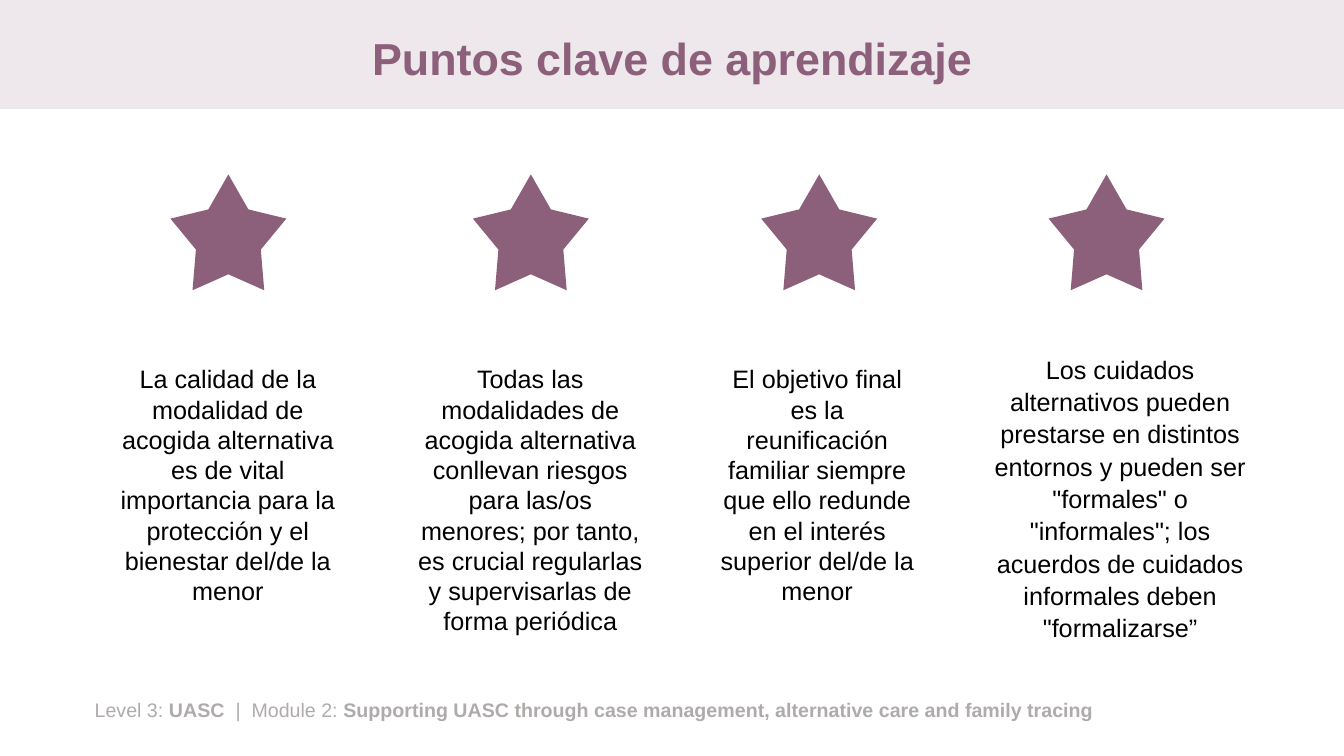
from dataclasses import dataclass

from pptx import Presentation
from pptx.dml.color import RGBColor
from pptx.enum.shapes import MSO_SHAPE
from pptx.enum.text import MSO_ANCHOR, MSO_AUTO_SIZE, PP_ALIGN
from pptx.util import Inches, Pt

RECTANGLE = MSO_SHAPE.RECTANGLE
STAR = MSO_SHAPE.STAR_5_POINT
TOP = MSO_ANCHOR.TOP
MIDDLE = MSO_ANCHOR.MIDDLE
LEFT = PP_ALIGN.LEFT
CENTER = PP_ALIGN.CENTER
FIXED_SIZE = MSO_AUTO_SIZE.NONE
GROW = MSO_AUTO_SIZE.SHAPE_TO_FIT_TEXT


@dataclass(frozen=True)
class Theme:
    font: str = "Arial"
    plum: RGBColor = RGBColor(0x8C, 0x5F, 0x7A)
    band: RGBColor = RGBColor(0xEE, 0xE7, 0xEB)
    body: RGBColor = RGBColor(0x00, 0x00, 0x00)
    footer: RGBColor = RGBColor(0xAF, 0xAB, 0xAB)
    title_size: int = 32
    body_size: int = 18
    footer_size: int = 14


@dataclass(frozen=True)
class Box:
    left: float
    top: float
    width: float
    height: float

    def lengths(self):
        return [Inches(value) for value in (self.left, self.top, self.width, self.height)]


@dataclass(frozen=True)
class Span:
    text: str
    bold: bool = False


@dataclass(frozen=True)
class TextStyle:
    size: int
    color: RGBColor
    alignment: PP_ALIGN = CENTER
    anchor: MSO_ANCHOR = TOP
    auto_size: MSO_AUTO_SIZE = GROW
    line_spacing: float = 1.0


@dataclass(frozen=True)
class KeyPoint:
    star_left: float
    box: Box
    text: str
    line_spacing: float = 1.0


THEME = Theme()
STAR_TOP = 1.73
STAR_SIZE = 1.15
STAR_DEPTH = 0.28
TEXT_TOP = 3.56

FOOTER = [
    Span("Level 3: "),
    Span("UASC", True),
    Span("  |  Module 2: "),
    Span("Supporting UASC through case management, alternative care and family tracing", True),
]

KEY_POINTS = [
    KeyPoint(
        1.69,
        Box(1.03, TEXT_TOP, 2.46, 2.52),
        "La calidad de la modalidad de acogida alternativa es de vital importancia "
        "para la protección y el bienestar del/de la menor",
    ),
    KeyPoint(
        4.69,
        Box(4.03, TEXT_TOP, 2.46, 2.83),
        "Todas las modalidades de acogida alternativa conllevan riesgos para las/os "
        "menores; por tanto, es crucial regularlas y supervisarlas de forma periódica",
    ),
    KeyPoint(
        7.55,
        Box(7.04, TEXT_TOP, 2.13, 2.52),
        "El objetivo final es la reunificación familiar siempre que ello redunde "
        "en el interés superior del/de la menor",
    ),
    KeyPoint(
        10.4,
        Box(9.71, 3.44, 2.8, 3.02),
        "Los cuidados alternativos pueden prestarse en distintos entornos y pueden ser "
        '"formales" o "informales"; los acuerdos de cuidados informales deben "formalizarse”',
        1.07,
    ),
]


def set_attributes(target: object, values: dict[str, object]) -> None:
    for name, value in values.items():
        setattr(target, name, value)


def add_filled_shape(slide, kind: MSO_SHAPE, box: Box, color: RGBColor):
    shape = slide.shapes.add_shape(kind, *box.lengths())
    shape.shadow.inherit = False
    shape.fill.solid()
    shape.fill.fore_color.rgb = color
    shape.line.fill.background()
    return shape


def add_text(slide, box: Box, spans: list[Span], style: TextStyle) -> None:
    shape = slide.shapes.add_textbox(*box.lengths())
    frame = shape.text_frame
    set_attributes(frame, {
        "word_wrap": True,
        "auto_size": style.auto_size,
        "vertical_anchor": style.anchor,
    })
    paragraph = frame.paragraphs[0]
    set_attributes(paragraph, {
        "alignment": style.alignment,
        "line_spacing": style.line_spacing,
    })
    for span in spans:
        run = paragraph.add_run()
        run.text = span.text
        set_attributes(run.font, {
            "name": THEME.font,
            "size": Pt(style.size),
            "bold": span.bold,
        })
        run.font.color.rgb = style.color


def add_key_point(slide, point: KeyPoint) -> None:
    star_box = Box(point.star_left, STAR_TOP, STAR_SIZE, STAR_SIZE)
    star = add_filled_shape(slide, STAR, star_box, THEME.plum)
    star.adjustments[0] = STAR_DEPTH
    style = TextStyle(THEME.body_size, THEME.body, line_spacing=point.line_spacing)
    add_text(slide, point.box, [Span(point.text)], style)


def main() -> None:
    presentation = Presentation()
    presentation.slide_width = Inches(13.33)
    presentation.slide_height = Inches(7.5)
    slide = presentation.slides.add_slide(presentation.slide_layouts[6])

    footer_style = TextStyle(THEME.footer_size, THEME.footer, alignment=LEFT)
    add_text(slide, Box(0.84, 6.87, 11.35, 0.34), FOOTER, footer_style)

    add_filled_shape(slide, RECTANGLE, Box(0, 0, 13.33, 1.08), THEME.band)
    title_style = TextStyle(
        THEME.title_size, THEME.plum, anchor=MIDDLE, auto_size=FIXED_SIZE, line_spacing=0.9
    )
    title = [Span("Puntos clave de aprendizaje", True)]
    add_text(slide, Box(0.92, 0.13, 11.5, 0.95), title, title_style)

    for point in KEY_POINTS:
        add_key_point(slide, point)

    presentation.save("out.pptx")


if __name__ == "__main__":
    main()
